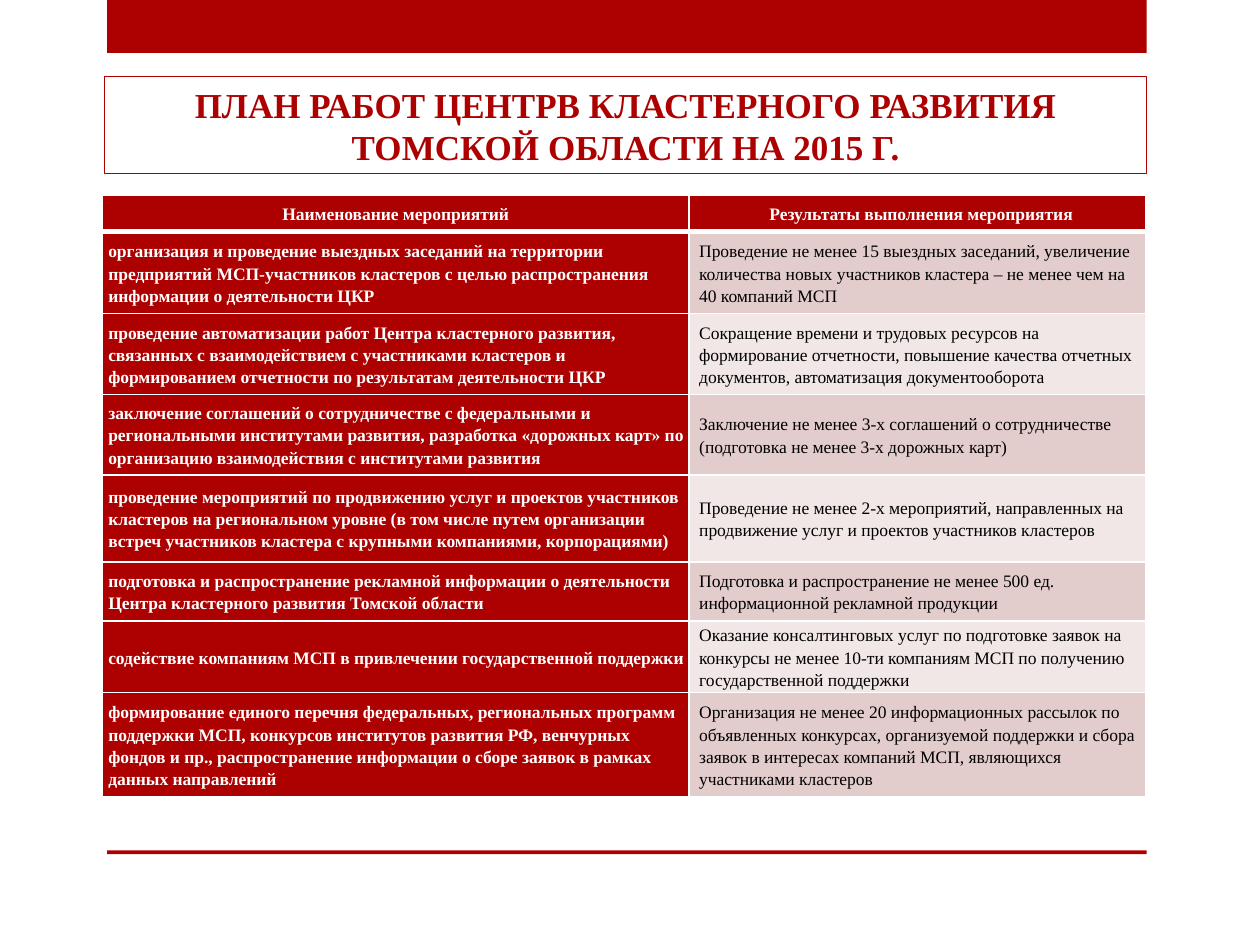
from lxml.etree import SubElement
from pptx import Presentation
from pptx.dml.color import RGBColor
from pptx.enum.shapes import MSO_SHAPE
from pptx.enum.text import MSO_ANCHOR, PP_ALIGN
from pptx.oxml.ns import qn
from pptx.util import Inches, Pt

RED = RGBColor(0xAD, 0x01, 0x01)
WHITE = RGBColor(0xFF, 0xFF, 0xFF)
BLACK = RGBColor(0x00, 0x00, 0x00)
ROSE = RGBColor(0xE3, 0xCC, 0xCC)
PALE_ROSE = RGBColor(0xF1, 0xE7, 0xE7)
FONT = "Times New Roman"

TITLE = "ПЛАН РАБОТ ЦЕНТРВ КЛАСТЕРНОГО РАЗВИТИЯ ТОМСКОЙ ОБЛАСТИ НА 2015 Г."
COLUMN_WIDTHS = (4.66, 3.62)
COLUMN_INDENTS = (0.03, 0.06)
HEADER_HEIGHT = 0.29
HEADERS = ("Наименование мероприятий", "Результаты выполнения мероприятия")
ACTIVITIES = [
    (0.65,
     "организация и проведение выездных заседаний на территории предприятий МСП-участников "
     "кластеров с целью распространения информации о деятельности ЦКР",
     "Проведение не менее 15 выездных заседаний, увеличение количества новых участников "
     "кластера – не менее чем на 40 компаний МСП"),
    (0.64,
     "проведение автоматизации работ Центра кластерного развития, связанных с взаимодействием "
     "с участниками кластеров и формированием отчетности по результатам деятельности ЦКР",
     "Сокращение времени и трудовых ресурсов на формирование отчетности, повышение качества "
     "отчетных документов, автоматизация документооборота"),
    (0.64,
     "заключение соглашений о сотрудничестве с федеральными и региональными институтами "
     "развития, разработка «дорожных карт» по организацию взаимодействия с институтами развития",
     "Заключение не менее 3-х соглашений о сотрудничестве (подготовка не менее 3-х дорожных карт)"),
    (0.69,
     "проведение мероприятий по продвижению услуг и проектов участников кластеров на "
     "региональном уровне (в том числе путем организации встреч участников кластера с "
     "крупными компаниями, корпорациями)",
     "Проведение не менее 2-х мероприятий, направленных на продвижение услуг и проектов "
     "участников кластеров"),
    (0.47,
     "подготовка и распространение рекламной информации о деятельности Центра кластерного "
     "развития Томской области",
     "Подготовка и распространение не менее 500 ед. информационной рекламной продукции"),
    (0.45,
     "содействие компаниям МСП в привлечении государственной поддержки",
     "Оказание консалтинговых услуг по подготовке заявок на конкурсы не менее 10-ти "
     "компаниям МСП по получению государственной поддержки"),
    (0.83,
     "формирование единого перечня федеральных, региональных программ поддержки МСП, "
     "конкурсов институтов развития РФ, венчурных фондов и пр., распространение информации "
     "о сборе заявок в рамках данных направлений",
     "Организация не менее 20 информационных рассылок по объявленных конкурсах, организуемой "
     "поддержки и сбора заявок в интересах компаний МСП, являющихся участниками кластеров"),
]


def add_bar(page, top, height):
    """Add a red band across the content width."""
    bar = page.shapes.add_shape(
        MSO_SHAPE.RECTANGLE, Inches(0.85), Inches(top), Inches(8.25), Inches(height))
    bar.shadow.inherit = False
    bar.fill.solid()
    bar.fill.fore_color.rgb = RED
    bar.line.fill.background()


def add_span(para, text, size, color, bold):
    """Add one formatted run to a paragraph."""
    span = para.add_run()
    span.text = text
    span.font.name = FONT
    span.font.size = Pt(size)
    span.font.bold = bold
    span.font.color.rgb = color


def add_title(page):
    """Add the outlined title box."""
    box = page.shapes.add_textbox(Inches(0.83), Inches(0.61), Inches(8.27), Inches(0.77))
    box.line.color.rgb = RED
    box.line.width = Pt(0.75)
    box.text_frame.word_wrap = True
    para = box.text_frame.paragraphs[0]
    para.alignment = PP_ALIGN.CENTER
    add_span(para, TITLE, 20, RED, True)


def set_borders(cell, bottom_width):
    """Draw white borders around a cell."""
    properties = cell._tc.get_or_add_tcPr()
    widths = {"a:lnL": 1, "a:lnR": 1, "a:lnT": 1, "a:lnB": bottom_width}
    for side, width in widths.items():
        border = SubElement(properties, qn(side), w=str(Pt(width)))
        fill = SubElement(border, qn("a:solidFill"))
        SubElement(fill, qn("a:srgbClr"), val=str(WHITE))


def fill_cell(cell, text, fill, color, bold, alignment, indent, bottom_width=1):
    """Write and style one table cell."""
    set_borders(cell, bottom_width)
    cell.fill.solid()
    cell.fill.fore_color.rgb = fill
    cell.vertical_anchor = MSO_ANCHOR.MIDDLE
    cell.margin_left = cell.margin_right = Inches(0.02)
    cell.margin_top = cell.margin_bottom = Inches(0.02)
    para = cell.text_frame.paragraphs[0]
    para.alignment = alignment
    para.line_spacing = 1.15
    para._p.get_or_add_pPr().set("marL", str(Inches(indent)))
    add_span(para, text, 10, color, bold)


def add_plan(page):
    """Add the table of activities and their results."""
    heights = [HEADER_HEIGHT] + [height for height, *_ in ACTIVITIES]
    table = page.shapes.add_table(
        len(heights), len(COLUMN_WIDTHS), Inches(0.81), Inches(1.55),
        Inches(sum(COLUMN_WIDTHS)), Inches(sum(heights))).table
    for column, width in zip(table.columns, COLUMN_WIDTHS):
        column.width = Inches(width)
    for row, height in zip(table.rows, heights):
        row.height = Inches(height)
    for index, header in enumerate(HEADERS):
        fill_cell(table.cell(0, index), header, RED, WHITE, True,
                  PP_ALIGN.CENTER, (0, 0.06)[index], bottom_width=3)
    for index, (_, activity, result) in enumerate(ACTIVITIES, start=1):
        fill_cell(table.cell(index, 0), activity, RED, WHITE, True,
                  PP_ALIGN.LEFT, COLUMN_INDENTS[0], bottom_width=1)
        fill_cell(table.cell(index, 1), result, ROSE if index % 2 else PALE_ROSE,
                  BLACK, False, PP_ALIGN.LEFT, COLUMN_INDENTS[1])
    for index in range(len(HEADERS)):
        top = table.cell(1, index)._tc.tcPr.find(qn("a:lnT"))
        top.set("w", str(Pt(3)))


def main():
    """Build the slide and save the deck."""
    deck = Presentation()
    deck.slide_width = Inches(10)
    deck.slide_height = Inches(7.5)
    page = deck.slides.add_slide(deck.slide_layouts[6])
    add_bar(page, 0, 0.42)
    add_bar(page, 6.75, 0.03)
    add_plan(page)
    add_title(page)
    deck.save("out.pptx")


if __name__ == "__main__":
    main()
